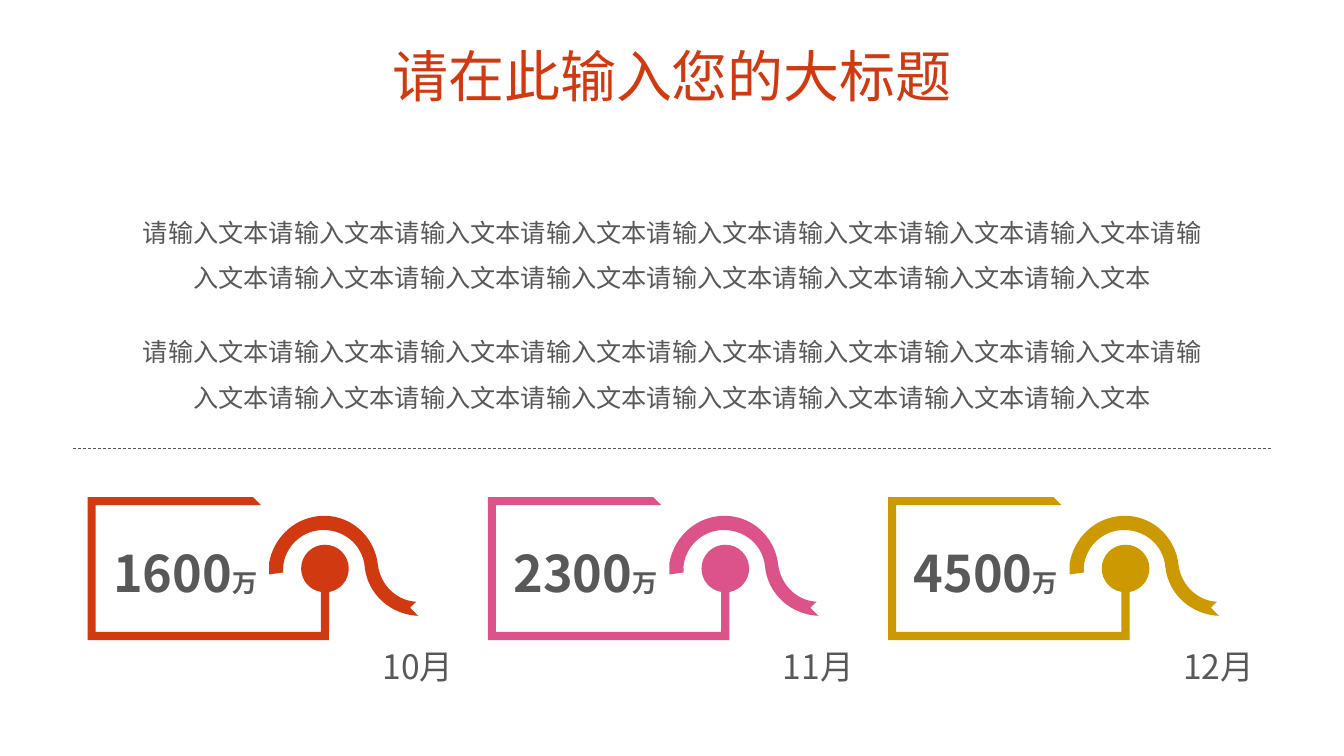
from dataclasses import dataclass
from itertools import pairwise
from math import cos, radians, sin, tan

from lxml.etree import SubElement
from pptx import Presentation
from pptx.dml.color import RGBColor
from pptx.enum.dml import MSO_LINE
from pptx.enum.shapes import MSO_CONNECTOR
from pptx.enum.text import MSO_ANCHOR as Anchor, MSO_AUTO_SIZE, PP_ALIGN as Align
from pptx.oxml.ns import qn
from pptx.shapes.autoshape import Shape
from pptx.slide import Slide
from pptx.text.text import _Run as Run
from pptx.util import Pt

FONT = "Noto Sans CJK SC"
RED = RGBColor(0xD1, 0x39, 0x10)
PINK = RGBColor(0xDC, 0x53, 0x89)
GOLD = RGBColor(0xCC, 0x99, 0x00)
GRAY = RGBColor(0x58, 0x58, 0x58)

Point = tuple[float, float]
Segment = list[Point]

CARD_LEFT, CARD_TOP, CARD_STEP = 62.5, 355, 285.95
DOT_X, DOT_Y, DOT_R = 169.6, 51.1, 17
BAR = 5.8
FRAME_BOTTOM = 102.2
RIBBON_CENTER = (181.1, 51.1)
RIBBON_ANGLE = 174.5
RIBBON = [
    [(236.2, 85)],
    [(216.7, 84.2), (200.2, 69.8), (198, 50.4)],
    [(196.6, 33.8), (182.2, 22.3), (165.6, 23.8)],
    [(151.9, 25.2), (141.1, 36), (139.7, 49.7)],
    [(139.7, 54)],
    [(129.6, 55.4)],
    [(129.6, 47.5)],
    [(132.5, 30.2), (146.2, 15.8), (164.9, 13.7)],
    [(186.5, 11.5), (205.2, 27.4), (207.4, 49)],
    [(209.5, 63.4), (221, 74.2), (234.7, 74.9)],
    [(230.4, 79.2)],
]


@dataclass
class Card:
    number: str
    month: str
    color: RGBColor


@dataclass
class Box:
    left: float
    top: float
    width: float
    height: float


CARDS = [
    Card("1600", "10月", RED),
    Card("2300", "11月", PINK),
    Card("4500", "12月", GOLD),
]


def unrotate(point: Point) -> Point:
    a = radians(RIBBON_ANGLE)
    cx, cy = RIBBON_CENTER
    dx, dy = point[0] - cx, point[1] - cy
    return cx + dx * cos(a) + dy * sin(a), cy - dx * sin(a) + dy * cos(a)


def dot_arc(start: float, end: float) -> Segment:
    a, b = radians(start), radians(end)
    k = 4 / 3 * tan((b - a) / 4)
    return [(DOT_X + DOT_R * x, DOT_Y + DOT_R * y) for x, y in (
        (cos(a) - k * sin(a), sin(a) + k * cos(a)),
        (cos(b) + k * sin(b), sin(b) - k * cos(b)),
        (cos(b), sin(b)))]


def frame_segments() -> list[Segment]:
    stem_left, stem_right = DOT_X - BAR / 2, DOT_X + BAR / 2
    inner_bottom = FRAME_BOTTOM - BAR
    before = [(0, 0), (118.1, 0), (118.1 + BAR, BAR), (BAR, BAR),
              (BAR, inner_bottom), (stem_left, inner_bottom), (stem_left, 67.8)]
    arcs = [dot_arc(a, b) for a, b in pairwise((100, 180, 270, 360, 440))]
    after = [(stem_right, FRAME_BOTTOM), (0, FRAME_BOTTOM)]
    return [[p] for p in before] + arcs + [[p] for p in after]


def add_outline(s: Slide, segments: list[Segment], left: float, color: RGBColor) -> Shape:
    start, *rest = [(Pt(left + x), Pt(CARD_TOP + y)) for seg in segments for x, y in seg]
    builder = s.shapes.build_freeform(*start)
    builder.add_line_segments(rest)
    sp = builder.convert_to_shape()
    nodes = iter(list(sp._element.iter(qn("a:lnTo"))))
    for seg in segments[1:]:
        group = [next(nodes) for _ in seg]
        if len(group) == 3:
            group[0].tag = qn("a:cubicBezTo")
            for node in group[1:]:
                group[0].append(node[0])
                node.getparent().remove(node)
    sp.shadow.inherit = False
    sp.fill.solid()
    sp.fill.fore_color.rgb = color
    sp.line.fill.background()
    return sp


def style(r: Run, size: float, color: RGBColor, bold: bool = False) -> None:
    r.font.size = Pt(size)
    r.font.bold = bold
    r.font.color.rgb = color
    r.font.name = FONT
    SubElement(r._r.get_or_add_rPr(), qn("a:ea"), typeface=FONT)


def add_text(s: Slide, box: Box, text: str, size: float, color: RGBColor = GRAY,
             spacing: float = 1.5, anchor: Anchor = Anchor.MIDDLE,
             align: Align = Align.CENTER, bold: bool = False) -> Shape:
    sp = s.shapes.add_textbox(Pt(box.left), Pt(box.top), Pt(box.width), Pt(box.height))
    tf = sp.text_frame
    tf.word_wrap = True
    tf.vertical_anchor = anchor
    tf.text = text
    p = tf.paragraphs[0]
    p.alignment = align
    p.line_spacing = spacing
    style(p.runs[0], size, color, bold)
    return sp


def add_card(s: Slide, card: Card, left: float) -> None:
    ribbon_segments = [[unrotate(p) for p in seg] for seg in RIBBON]
    ribbon = add_outline(s, ribbon_segments, left, card.color)
    ribbon.rotation = RIBBON_ANGLE
    add_outline(s, frame_segments(), left, card.color)
    number = add_text(s, Box(left + 2.3, 383.8, 126, 50.9), card.number, 36,
                      spacing=1.0, anchor=Anchor.TOP, align=Align.RIGHT, bold=True)
    tf = number.text_frame
    tf.auto_size = MSO_AUTO_SIZE.SHAPE_TO_FIT_TEXT
    r = tf.paragraphs[0].add_run()
    r.text = "万"
    style(r, 18, GRAY, bold=True)
    add_text(s, Box(left + 192.5, 449.6, 87.1, 38.2), card.month, 24)


def add_divider(s: Slide) -> None:
    line = s.shapes.add_connector(MSO_CONNECTOR.STRAIGHT,
                                  Pt(52), Pt(320.4), Pt(908), Pt(320.4))
    line.line.color.rgb = GRAY
    line.line.width = Pt(0.5)
    line.line.dash_style = MSO_LINE.DASH
    SubElement(line._element.spPr, qn("a:effectLst"))


def main() -> None:
    prs = Presentation()
    prs.slide_width, prs.slide_height = Pt(960), Pt(540)
    s = prs.slides.add_slide(prs.slide_layouts[6])
    add_text(s, Box(59.5, 8.6, 841, 73.4), "请在此输入您的大标题", 40, RED,
             spacing=0.9, anchor=Anchor.BOTTOM)
    for i, card in enumerate(CARDS):
        add_card(s, card, CARD_LEFT + i * CARD_STEP)
    add_divider(s)
    for top in (139.7, 224.9):
        add_text(s, Box(89.5, top, 781.2, 74.2), "请输入文本" * 16, 18)
    prs.save("out.pptx")


if __name__ == "__main__":
    main()
